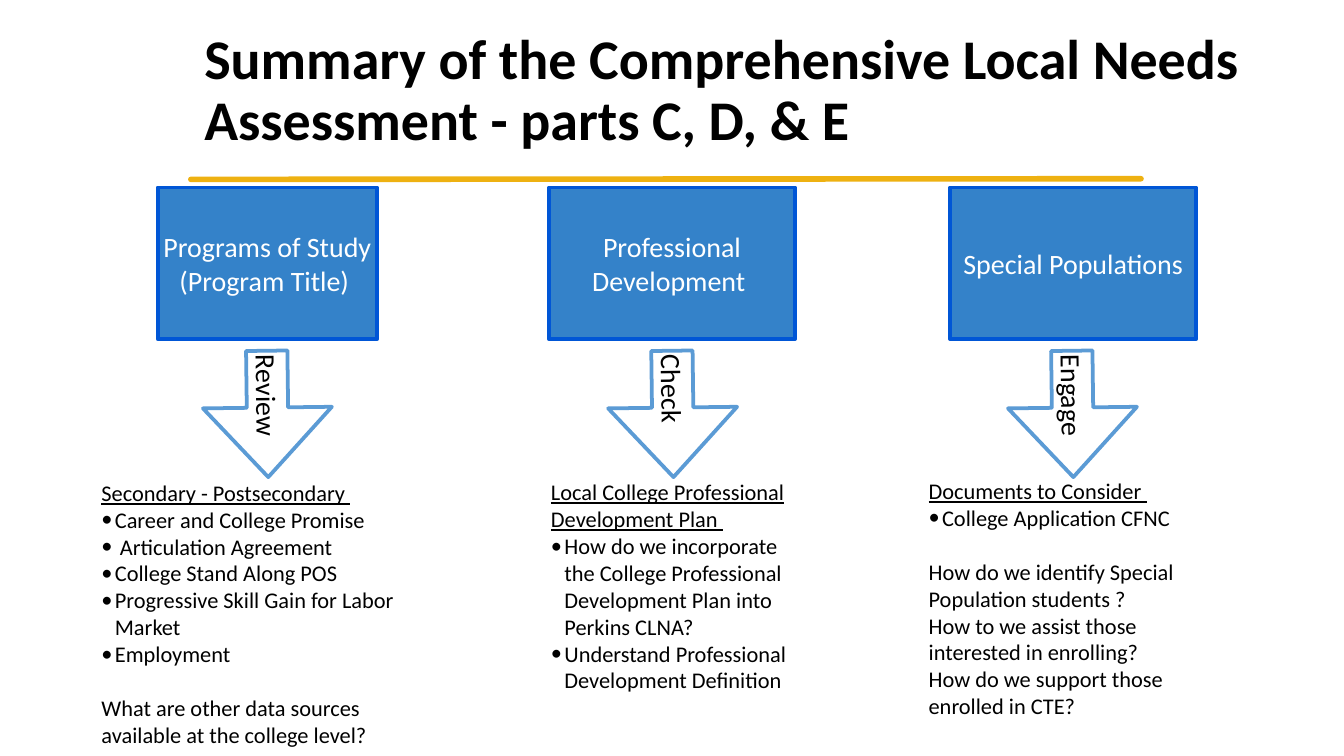
from dataclasses import dataclass

from lxml.etree import SubElement
from pptx import Presentation
from pptx.dml.color import RGBColor
from pptx.enum.shapes import MSO_CONNECTOR as Connector, MSO_SHAPE as Shape
from pptx.enum.text import MSO_ANCHOR as Anchor, MSO_AUTO_SIZE as AutoSize, PP_ALIGN as Align
from pptx.oxml.ns import qn
from pptx.util import Pt

PX = 4572  # EMU in one px, 200 px to the inch


@dataclass(frozen=True)
class Theme:
    font: str = "Calibri"
    ink: str = "000000"
    paper: str = "FFFFFF"
    rule: str = "EEB111"
    box: str = "3482C9"
    box_line: str = "0056D6"
    arrow_line: str = "5B9BD5"
    title_size: int = 30
    label_size: int = 15
    body_size: int = 12


THEME = Theme()
SLIDE_SIZE = (2000, 1125)
INSET = 6
INDENT = 20
ARROW_SIZE = (188, 192)
BLANK_LINE = 14.6  # points

# Each column: box, arrow left, list box, and their words.
# List rows: (style, text), where "gap" is plain text one line further down.
COLUMNS = [
    {
        "box": (235, 279, 326, 226),
        "heading": ["Programs of Study", "(Program Title) "],
        "arrow_left": 304,
        "action": "Review",
        "list": (145, 705, 512, 416),
        "rows": [
            ("underline", "Secondary - Postsecondary "),
            ("bullet", "Career and College Promise"),
            ("bullet", " Articulation Agreement"),
            ("bullet", "College Stand Along POS"),
            ("bullet", "Progressive Skill Gain for Labor Market"),
            ("bullet", "Employment"),
            ("gap", "What are other data sources available at the college level?"),
        ],
    },
    {
        "box": (817, 279, 366, 226),
        "heading": ["Professional Development "],
        "arrow_left": 907,
        "action": "Check",
        "list": (814, 705, 374, 334),
        "rows": [
            ("underline", "Local College Professional Development Plan "),
            ("bullet", "How do we incorporate the College Professional "
                       "Development Plan into Perkins CLNA?"),
            ("bullet", "Understand Professional Development Definition"),
        ],
    },
    {
        "box": (1414, 279, 366, 226),
        "heading": ["Special Populations"],
        "arrow_left": 1502,
        "action": "Engage",
        "list": (1376, 702, 440, 376),
        "rows": [
            ("underline", "Documents to Consider "),
            ("bullet", "College Application CFNC"),
            ("gap", "How do we identify Special Population students ?"),
            ("plain", "How to we assist those interested in enrolling?"),
            ("plain", "How do we support those enrolled in CTE?"),
        ],
    },
]


def emu(*lengths):
    return [length * PX for length in lengths]


def color(value):
    return RGBColor.from_string(value)


def set_font(paragraph, size, ink, bold=None, underline=None):
    font = paragraph.font
    font.name, font.size = THEME.font, Pt(size)
    font.color.rgb = color(ink)
    font.bold, font.underline = bold, underline


def set_frame(frame):
    frame.word_wrap = True
    frame.vertical_anchor = Anchor.MIDDLE
    frame.margin_left = frame.margin_right = INSET * PX
    frame.margin_top = frame.margin_bottom = INSET * PX


def add_paragraphs(frame, texts):
    """Yield one paragraph for each text, reusing the first."""
    for index, text in enumerate(texts):
        paragraph = frame.paragraphs[0] if index == 0 else frame.add_paragraph()
        paragraph.text = text
        yield paragraph


def add_bullet(paragraph):
    properties = paragraph._p.get_or_add_pPr()
    properties.set("marL", str(INDENT * PX))
    properties.set("indent", str(-INDENT * PX))
    SubElement(properties, qn("a:buFont")).set("typeface", THEME.font)
    SubElement(properties, qn("a:buChar")).set("char", "•")


def add_label(slide, preset, box, texts, fill, line, ink, align):
    """A filled, outlined preset shape with its words."""
    shape = slide.shapes.add_shape(preset, *emu(*box))
    shape.shadow.inherit = False
    shape.fill.solid()
    shape.fill.fore_color.rgb = color(fill)
    shape.line.color.rgb = color(line)
    shape.line.width = Pt(2)
    set_frame(shape.text_frame)
    for paragraph in add_paragraphs(shape.text_frame, texts):
        paragraph.alignment = align
        set_font(paragraph, THEME.label_size, ink)
    return shape


def add_header(slide, box):
    """Title with the gold rule below it."""
    left, top, width, height = box
    title = slide.shapes.title
    title.left, title.top, title.width, title.height = emu(*box)
    frame = title.text_frame
    frame.text = "Summary of the Comprehensive Local Needs Assessment - parts C, D, & E"
    frame.auto_size = AutoSize.NONE
    frame.vertical_anchor = Anchor.MIDDLE
    paragraph = frame.paragraphs[0]
    paragraph.alignment = Align.LEFT
    paragraph.line_spacing = 0.9
    set_font(paragraph, THEME.title_size, THEME.ink, bold=True)

    rule_top = top + height + 20
    rule = slide.shapes.add_connector(
        Connector.STRAIGHT, *emu(left, rule_top + 1, left + 1414, rule_top))
    rule.line.color.rgb = color(THEME.rule)
    rule.line.width = Pt(3)
    properties = rule._element.spPr
    properties.find(qn("a:ln")).set("cap", "rnd")
    SubElement(properties, qn("a:effectLst"))


def add_list(slide, box, rows):
    """Underlined heading, bullets and questions."""
    frame = slide.shapes.add_textbox(*emu(*box)).text_frame
    set_frame(frame)
    paragraphs = add_paragraphs(frame, [text for _, text in rows])
    for (style, _), paragraph in zip(rows, paragraphs):
        if style == "gap":
            paragraph.space_before = Pt(BLANK_LINE)
        if style == "bullet":
            add_bullet(paragraph)
        set_font(paragraph, THEME.body_size, THEME.ink,
                 underline=True if style == "underline" else None)


def add_column(slide, column):
    """Heading box, down arrow and list."""
    add_label(slide, Shape.RECTANGLE, column["box"], column["heading"],
              THEME.box, THEME.box_line, THEME.paper, Align.CENTER)
    add_list(slide, column["list"], column["rows"])

    _, top, _, height = column["box"]
    arrow_box = (column["arrow_left"], top + height + 15, *ARROW_SIZE)
    arrow = add_label(slide, Shape.RIGHT_ARROW, arrow_box, [column["action"]],
                      THEME.paper, THEME.arrow_line, THEME.ink, Align.LEFT)
    arrow.adjustments[0], arrow.adjustments[1] = 0.32, 0.55
    arrow.rotation = 89.3


def main():
    presentation = Presentation()
    presentation.slide_width, presentation.slide_height = emu(*SLIDE_SIZE)
    slide = presentation.slides.add_slide(presentation.slide_layouts[5])
    add_header(slide, (284, 28, 1610, 218))
    for column in COLUMNS:
        add_column(slide, column)
    presentation.save("out.pptx")


if __name__ == "__main__":
    main()
